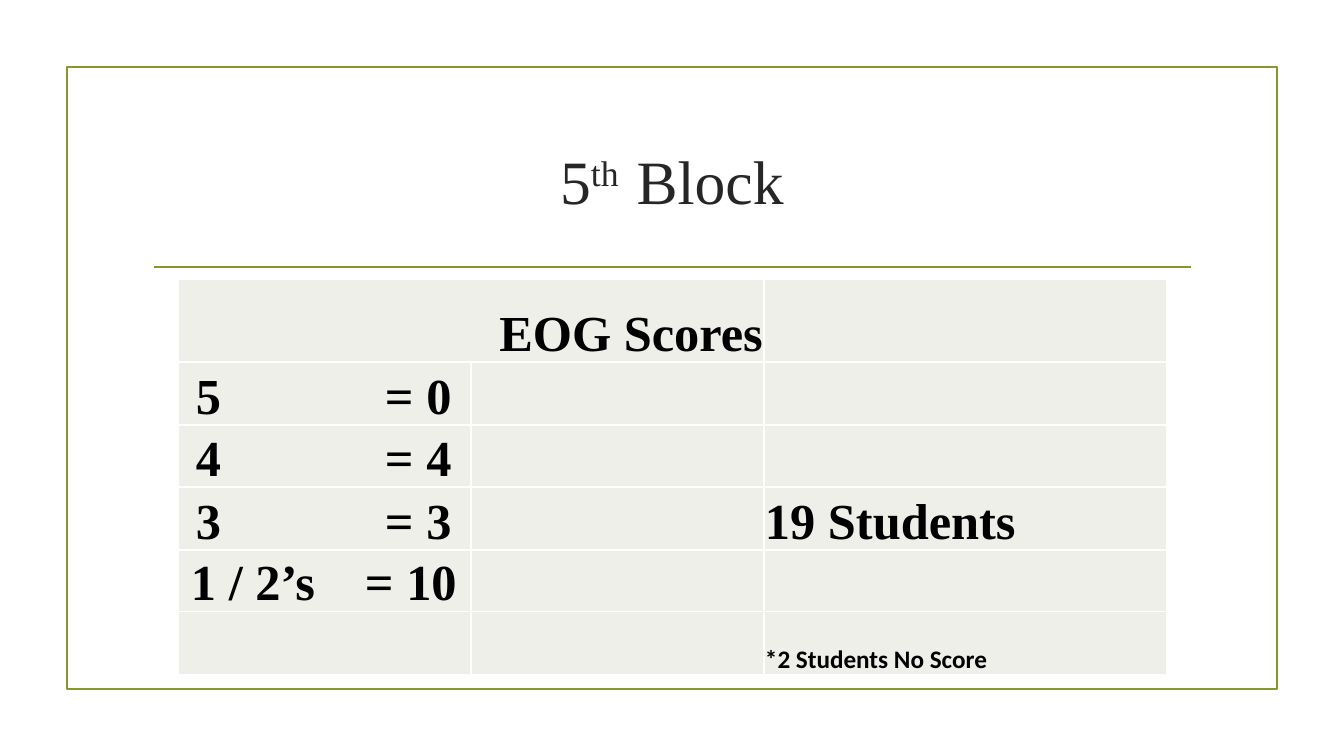
from lxml.etree import SubElement
from pptx import Presentation
from pptx.dml.color import RGBColor
from pptx.enum.shapes import MSO_CONNECTOR, MSO_SHAPE
from pptx.enum.text import MSO_ANCHOR, PP_ALIGN
from pptx.oxml.ns import qn
from pptx.util import Emu, Pt

SERIF, GREEN, CELL_FILL, BORDER = "Times New Roman", "83992A", "EDEFE8", "FFFFFF"
TITLE = [("5", 0), ("th  ", 30000), ("Block", 0)]
# level, count, left inset px, tab px
SCORES = [("5", "= 0", 18, 189), ("4", "= 4", 18, 189),
          ("3", "= 3", 18, 189), ("1 / 2’s", "= 10", 13, 174)]
COLS = [293, 293, 403]
ROWS = [83, 63, 62, 63, 62, 63]


def px(n):
    return Emu(round(n * 914400 / 100.8))


def color(code):
    return RGBColor.from_string(code)


def add_run(p, text, size=36, font=SERIF, ink="000000", bold=True, baseline=0):
    r = p.add_run()
    r.text = text
    r.font.size, r.font.name, r.font.bold = Pt(size), font, bold
    r.font.color.rgb = color(ink)
    if baseline:
        r.font._element.set("baseline", str(baseline))


def style_cell(cell):
    cell.vertical_anchor = MSO_ANCHOR.BOTTOM
    cell.margin_left = cell.margin_right = cell.margin_top = px(1)
    cell.margin_bottom = 0
    tcPr = cell._tc.get_or_add_tcPr()
    for side in ("lnL", "lnR", "lnT", "lnB"):
        ln = SubElement(tcPr, qn("a:" + side), w=str(Pt(1)))
        SubElement(SubElement(ln, qn("a:solidFill")), qn("a:srgbClr"), val=BORDER)
    cell.fill.solid()
    cell.fill.fore_color.rgb = color(CELL_FILL)


prs = Presentation()
prs.slide_width, prs.slide_height = px(1344), px(756)
s = prs.slides.add_slide(prs.slide_layouts[6])

# Frame and rule
frame = s.shapes.add_shape(MSO_SHAPE.RECTANGLE, px(67), px(67), px(1210), px(622))
frame.shadow.inherit = False
frame.fill.background()
rule = s.shapes.add_connector(MSO_CONNECTOR.STRAIGHT, px(154), px(267), px(1191), px(267))
SubElement(rule._element.spPr, qn("a:effectLst"))
for sp in (frame, rule):
    sp.line.color.rgb = color(GREEN)
    sp.line.width = Pt(1.25)

# Title
tf = s.shapes.add_textbox(px(143), px(108), px(1058), px(144)).text_frame
tf.word_wrap = True
tf.vertical_anchor = MSO_ANCHOR.MIDDLE
p = tf.paragraphs[0]
p.alignment = PP_ALIGN.CENTER
for text, baseline in TITLE:
    add_run(p, text, size=44, ink="262626", bold=False, baseline=baseline)

# Score table
table = s.shapes.add_table(len(ROWS), len(COLS), px(178), px(279),
                           px(sum(COLS)), px(sum(ROWS))).table
table.first_row = table.horz_banding = False
for column, width in zip(table.columns, COLS):
    column.width = px(width)
for row, height in zip(table.rows, ROWS):
    row.height = px(height)
for cell in table.iter_cells():
    style_cell(cell)

table.cell(0, 0).merge(table.cell(0, 1))
p = table.cell(0, 0).text_frame.paragraphs[0]
p.alignment = PP_ALIGN.RIGHT
add_run(p, "EOG Scores")

for i, (level, count, inset, tab) in enumerate(SCORES, 1):
    cell = table.cell(i, 0)
    cell.margin_left = px(inset)
    p = cell.text_frame.paragraphs[0]
    tabs = SubElement(p._p.get_or_add_pPr(), qn("a:tabLst"))
    SubElement(tabs, qn("a:tab"), pos=str(px(tab)), algn="l")
    add_run(p, level + "\t" + count)

add_run(table.cell(3, 2).text_frame.paragraphs[0], "19 Students")
add_run(table.cell(5, 2).text_frame.paragraphs[0], "*2 Students No Score",
        size=18, font="Calibri")

prs.save("out.pptx")
